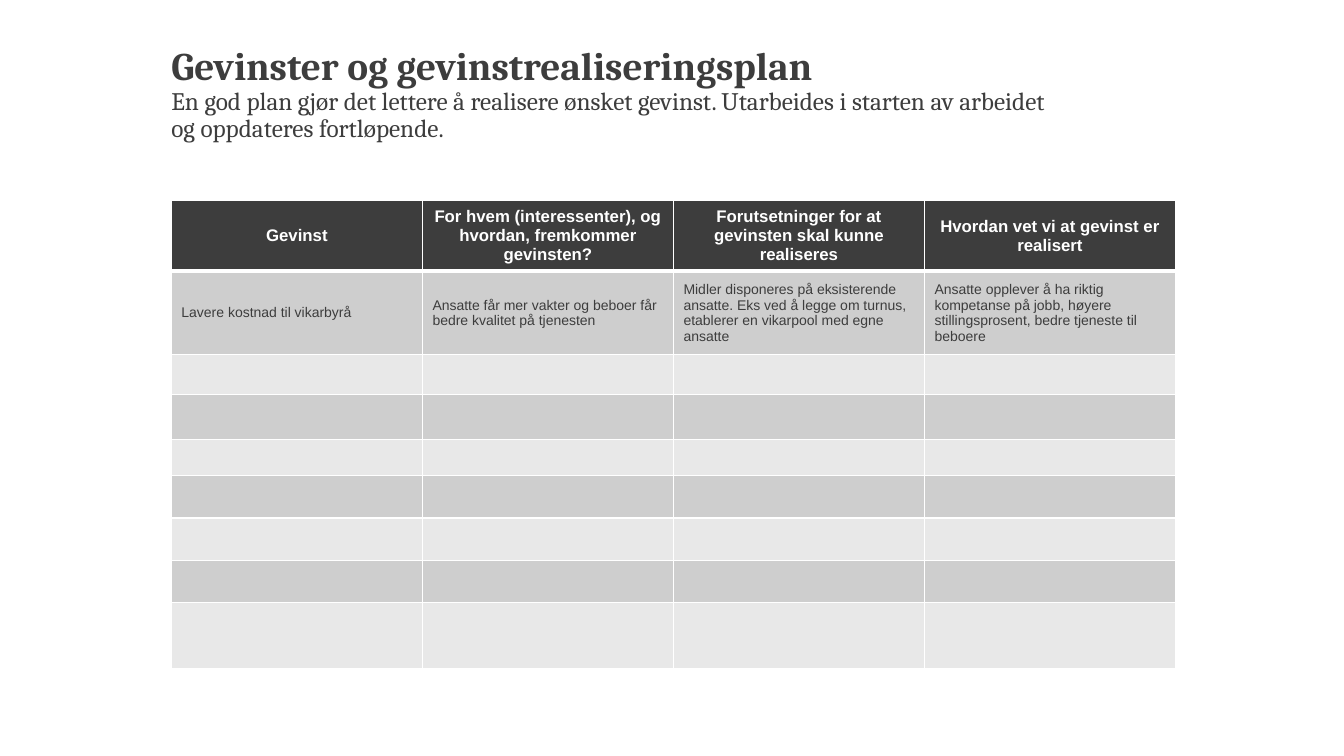
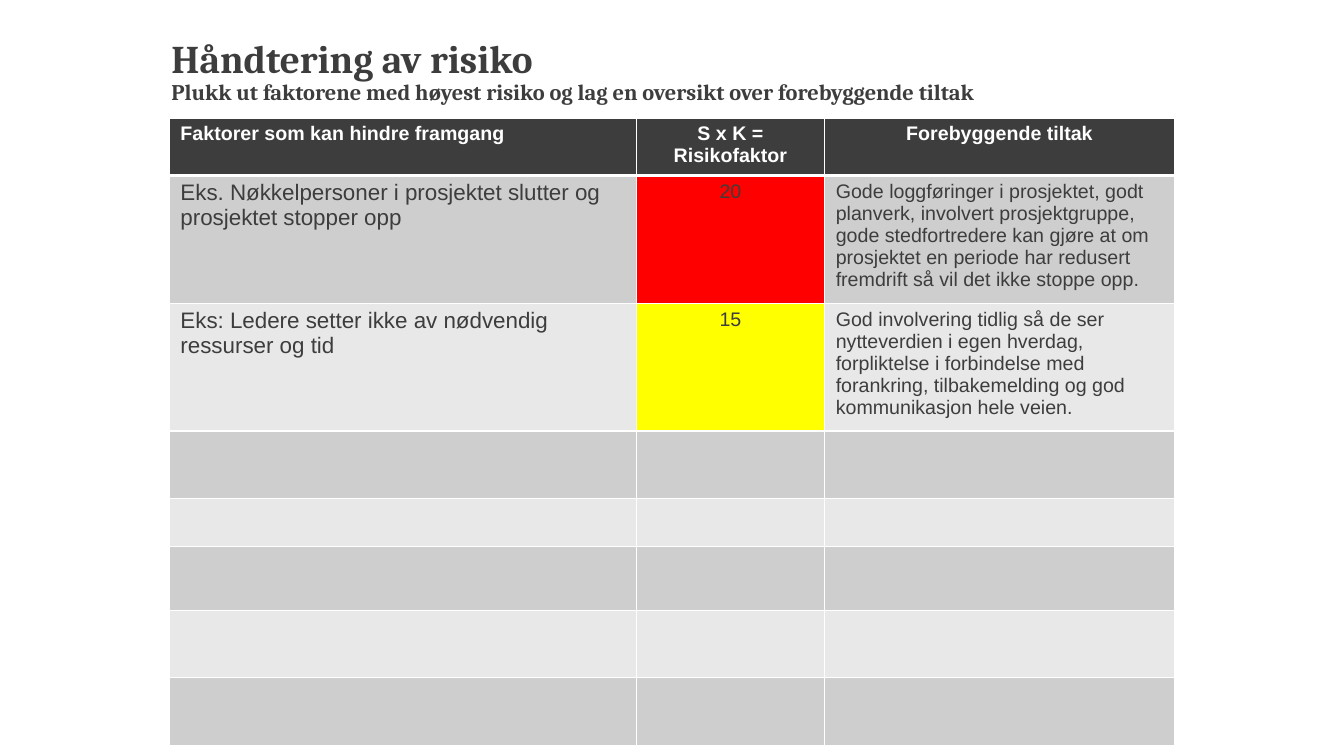
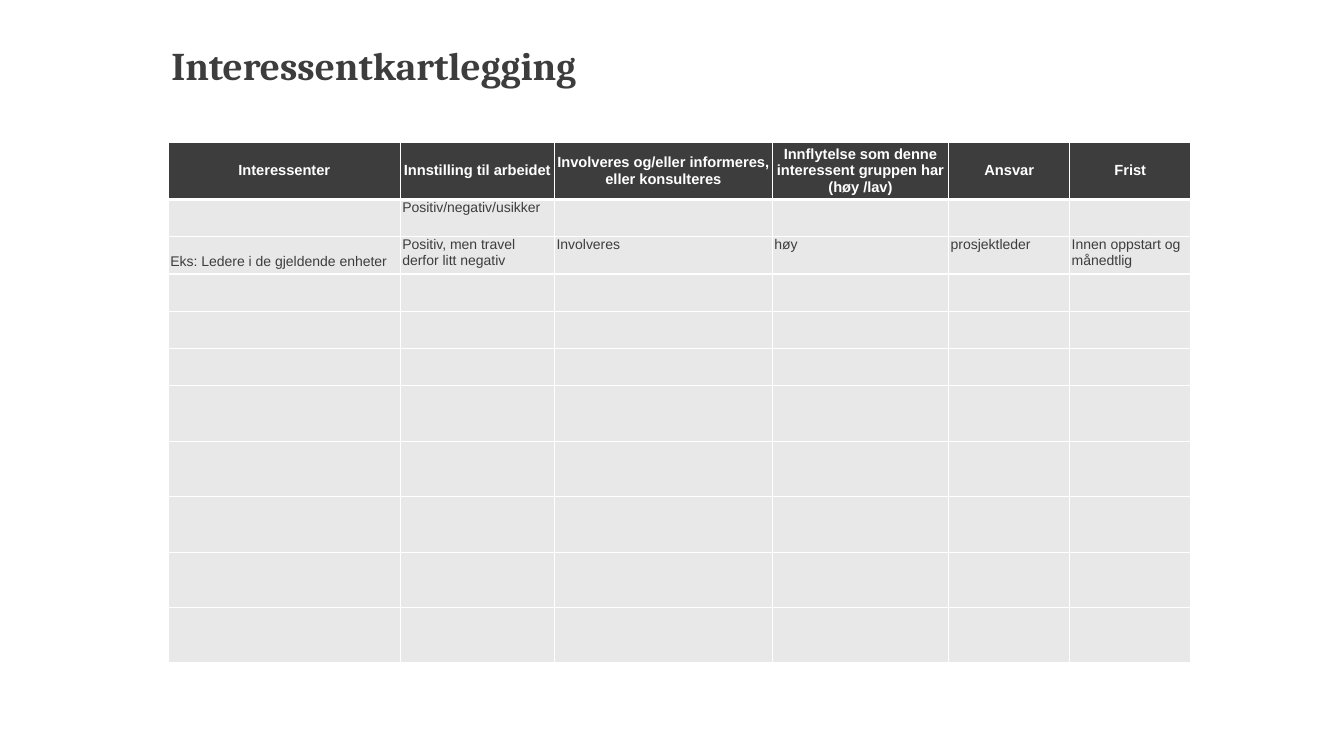
import dataclasses

import lxml.etree
import pptx
import pptx.dml.color
import pptx.enum.text
import pptx.oxml.ns
import pptx.slide
import pptx.table
import pptx.text.text
import pptx.util

Inches = pptx.util.Inches
Pt = pptx.util.Pt
ALIGN = pptx.enum.text.PP_ALIGN
ANCHOR = pptx.enum.text.MSO_ANCHOR


@dataclasses.dataclass(frozen=True)
class Theme:
    ink: str = "3D3D3D"
    white: str = "FFFFFF"
    dark_band: str = "CECECE"
    light_band: str = "E8E8E8"
    red: str = "FF0000"
    yellow: str = "FFFF00"
    heading_font: str = "Cambria"
    body_font: str = "Arial"
    title_size: float = 28
    title_spacing: float = 0.9
    thin: float = 1
    thick: float = 3


THEME = Theme()
Box = tuple[float, float, float, float]


@dataclasses.dataclass(frozen=True)
class Cell:
    """Table cell; unset values come from the grid."""
    text: str = ""
    size: float | None = None
    fill: str | None = None
    align: ALIGN | None = None
    anchor: ANCHOR | None = None
    bottom: float | None = None


@dataclasses.dataclass(frozen=True)
class Heading:
    box: Box
    title: str
    subtitle: tuple[str, ...] = ()
    size: float = 18
    bold: bool = False


@dataclasses.dataclass(frozen=True)
class Grid:
    left: float
    top: float
    cols: tuple[float, ...]
    rows: tuple[float, ...]
    header: tuple[Cell, ...]
    body: tuple[tuple[Cell, ...], ...]
    header_size: float
    body_size: float
    bands: tuple[str, ...]
    header_anchor: ANCHOR = ANCHOR.MIDDLE
    body_anchor: ANCHOR = ANCHOR.TOP
    margins: tuple[float, float] = (0.1, 0.05)


def style(p: pptx.text.text._Paragraph, font: str, size: float, color: str, bold: bool) -> None:
    p.font.name = font
    p.font.size = Pt(size)
    p.font.bold = bold
    p.font.color.rgb = pptx.dml.color.RGBColor.from_string(color)


def add_heading(s: pptx.slide.Slide, heading: Heading) -> None:
    sp = s.shapes.add_textbox(*map(Inches, heading.box))
    tf = sp.text_frame
    tf.word_wrap = True
    tf.margin_left = tf.margin_top = tf.margin_right = tf.margin_bottom = 0
    tf.text = "\n".join((heading.title, *heading.subtitle))
    for i, p in enumerate(tf.paragraphs):
        p.line_spacing = THEME.title_spacing
        size, bold = (heading.size, heading.bold) if i else (THEME.title_size, True)
        style(p, THEME.heading_font, size, THEME.ink, bold)


def add_borders(cell: pptx.table._Cell, row: int) -> None:
    """White cell borders, thicker between header and body."""
    tc_pr = cell._tc.get_or_add_tcPr()
    qn = pptx.oxml.ns.qn
    for side in "LRTB":
        thick = (row, side) in ((0, "B"), (1, "T"))
        width = Pt(THEME.thick if thick else THEME.thin)
        ln = lxml.etree.SubElement(tc_pr, qn(f"a:ln{side}"), w=str(width))
        fill = lxml.etree.SubElement(ln, qn("a:solidFill"))
        lxml.etree.SubElement(fill, qn("a:srgbClr"), val=THEME.white)


def fill_cell(cell: pptx.table._Cell, content: Cell, grid: Grid, row: int) -> None:
    is_header = row == 0
    band = THEME.ink if is_header else grid.bands[(row - 1) % len(grid.bands)]
    add_borders(cell, row)
    cell.fill.solid()
    cell.fill.fore_color.rgb = pptx.dml.color.RGBColor.from_string(content.fill or band)
    side, edge = map(Inches, grid.margins)
    cell.margin_left = cell.margin_right = side
    cell.margin_top = cell.margin_bottom = edge
    if content.bottom is not None:
        cell.margin_bottom = Inches(content.bottom)
    cell.vertical_anchor = content.anchor or (grid.header_anchor if is_header else grid.body_anchor)
    cell.text = content.text
    size = content.size or (grid.header_size if is_header else grid.body_size)
    for p in cell.text_frame.paragraphs:
        p.alignment = content.align or (ALIGN.CENTER if is_header else ALIGN.LEFT)
        style(p, THEME.body_font, size, THEME.white if is_header else THEME.ink, is_header)


def add_grid(s: pptx.slide.Slide, grid: Grid) -> None:
    frame = s.shapes.add_table(
        len(grid.rows), len(grid.cols), Inches(grid.left), Inches(grid.top),
        Inches(sum(grid.cols)), Inches(sum(grid.rows)))
    table = frame.table
    for col, width in zip(table.columns, grid.cols):
        col.width = Inches(width)
    content = (grid.header, *grid.body)
    for i, height in enumerate(grid.rows):
        table.rows[i].height = Inches(height)
        cells = content[i] if i < len(content) else (Cell(),) * len(grid.cols)
        for j, cell in enumerate(cells):
            fill_cell(table.cell(i, j), cell, grid, i)


def cells(*texts: str) -> tuple[Cell, ...]:
    return tuple(Cell(text) for text in texts)


BANDED = (THEME.dark_band, THEME.light_band)

# Benefits plan
BENEFITS = (
    Heading((1.7, 0.46, 11.36, 1.15), "Gevinster og gevinstrealiseringsplan",
            ("En god plan gjør det lettere å realisere ønsket gevinst. Utarbeides i starten av arbeidet",
             "og oppdateres fortløpende.")),
    Grid(
        1.7, 1.99, (2.49,) * 4, (0.7, 0.83, 0.39, 0.45, 0.36, *(0.42,) * 3, 0.65),
        cells("Gevinst",
              "For hvem (interessenter), og hvordan, fremkommer gevinsten?",
              "Forutsetninger for at gevinsten skal kunne realiseres",
              "Hvordan vet vi at gevinst er realisert"),
        (cells("Lavere kostnad til vikarbyrå",
               "Ansatte får mer vakter og beboer får bedre kvalitet på tjenesten",
               "Midler disponeres på eksisterende ansatte. Eks ved å legge om turnus, "
               "etablerer en vikarpool med egne ansatte",
               "Ansatte opplever å ha riktig kompetanse på jobb, høyere stillingsprosent, "
               "bedre tjeneste til beboere"),),
        header_size=12, body_size=10, bands=BANDED, body_anchor=ANCHOR.MIDDLE),
)

# Risk handling
RISKS = (
    Heading((1.7, 0.39, 9.97, 0.81), "Håndtering av risiko",
            ("Plukk ut faktorene med høyest risiko og lag en oversikt over forebyggende tiltak",),
            size=16, bold=True),
    Grid(
        1.68, 1.17, (4.63, 1.87, 3.47), (0.57, 1.19, 1.19, 0.67, 0.48, 0.63, 0.67, 0.67),
        (Cell("Faktorer som kan hindre framgang", align=ALIGN.LEFT),
         Cell("S x K = Risikofaktor"), Cell("Forebyggende tiltak")),
        ((Cell("Eks. Nøkkelpersoner i prosjektet slutter og prosjektet stopper opp", size=16),
          Cell("20", fill=THEME.red, align=ALIGN.CENTER),
          Cell("Gode loggføringer i prosjektet, godt planverk, involvert prosjektgruppe, "
               "gode stedfortredere kan gjøre at om prosjektet en periode har redusert "
               "fremdrift så vil det ikke stoppe opp.")),
         (Cell("Eks: Ledere setter ikke av nødvendig ressurser og tid", size=16),
          Cell("15", fill=THEME.yellow, align=ALIGN.CENTER),
          Cell("God involvering tidlig så de ser nytteverdien i egen hverdag, forpliktelse i "
               "forbindelse med forankring, tilbakemelding og god kommunikasjon hele veien."))),
        header_size=14, body_size=14, bands=BANDED, header_anchor=ANCHOR.TOP,
        margins=(0.11, 0.05)),
)

# Stakeholder mapping
STAKEHOLDERS = (
    Heading((1.7, 0.46, 9.97, 0.94), "Interessentkartlegging"),
    Grid(
        1.67, 1.41, (2.3, 1.53, 2.16, 1.75, 1.2, 1.2), (0.57, *(0.37,) * 5, *(0.55,) * 5),
        cells("Interessenter", "Innstilling til arbeidet",
              "Involveres og/eller informeres, eller konsulteres",
              "Innflytelse som denne interessent gruppen har\n(høy /lav)", "Ansvar", "Frist"),
        (cells("", "Positiv/negativ/usikker", "", "", "", ""),
         (Cell("Eks: Ledere i de gjeldende enheter", anchor=ANCHOR.BOTTOM, bottom=0.05),
          *cells("Positiv, men travel derfor litt negativ", "Involveres", "høy",
                 "prosjektleder", "Innen oppstart og månedtlig"))),
        header_size=10.5, body_size=10, bands=(THEME.light_band,), margins=(0.02, 0)),
)


def main() -> None:
    prs = pptx.Presentation()
    prs.slide_width, prs.slide_height = Inches(13.33), Inches(7.5)
    for heading, grid in (BENEFITS, RISKS, STAKEHOLDERS):
        s = prs.slides.add_slide(prs.slide_layouts[6])
        add_heading(s, heading)
        add_grid(s, grid)
    prs.save("out.pptx")


if __name__ == "__main__":
    main()
